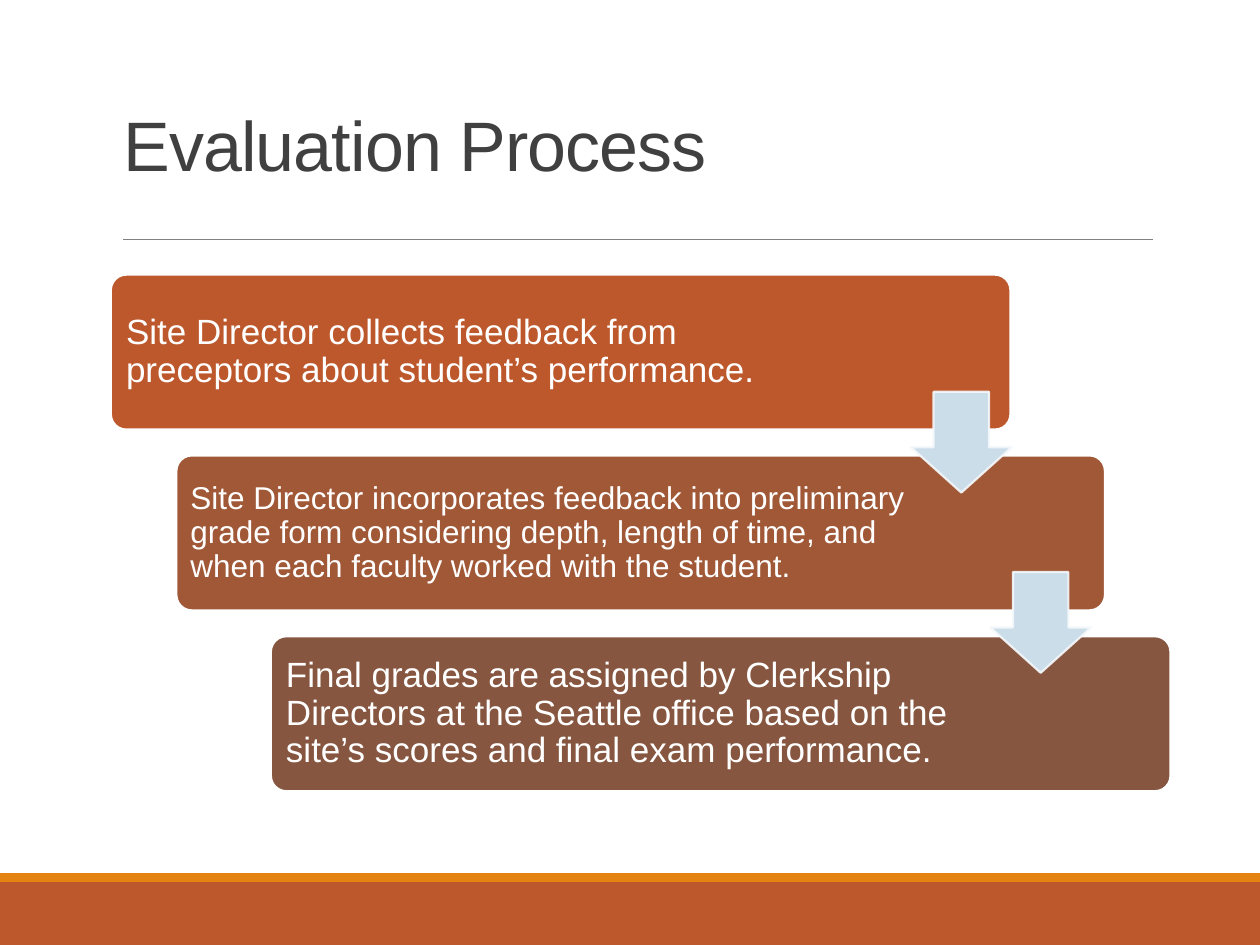
from dataclasses import dataclass

from lxml.etree import SubElement
from pptx import Presentation
from pptx.dml.color import RGBColor
from pptx.enum.shapes import MSO_CONNECTOR as CONN, MSO_SHAPE as SHAPE
from pptx.enum.text import MSO_ANCHOR as ANCHOR, MSO_AUTO_SIZE as AUTO, PP_ALIGN as ALIGN
from pptx.oxml.ns import qn
from pptx.util import Inches, Pt

COLS, ROWS = 100, 75
CARD_TOP, CARD_PITCH, CARD_H = 21.8, 14.35, 12.3
TEXT_GAP, TEXT_H = 0.4, 11.5
ARROW_TOP, ARROW_PITCH, ARROW_SIZE = 31.1, 14.3, 8

prs = Presentation()
prs.slide_width, prs.slide_height = Inches(10), Inches(7.5)


@dataclass
class Box:
    left: float
    top: float
    width: float
    height: float

    def emu(self) -> list[int]:
        return [x_at(self.left), y_at(self.top), x_at(self.width), y_at(self.height)]


@dataclass
class Step:
    left: float
    width: float
    text_width: float
    inset: float
    size: int
    fill: str
    text: str


STEPS = [
    Step(8.8, 71.4, 58.2, 0.08, 20, "BD582C",
         "Site Director collects feedback from preceptors about student’s performance."),
    Step(14, 73.7, 58.2, 0.07, 18, "A05837",
         "Site Director incorporates feedback into preliminary grade form considering "
         "depth, length of time, and when each faculty worked with the student."),
    Step(21.5, 71.4, 56.4, 0.08, 20, "865640",
         "Final grades are assigned by Clerkship Directors at the Seattle office based on "
         "the site’s scores and final exam performance."),
]
ARROW_LEFTS = [72.3, 78.6]


def x_at(col: float) -> int:
    return round(prs.slide_width * col / COLS)


def y_at(row: float) -> int:
    return round(prs.slide_height * row / ROWS)


def rgb(color: str) -> RGBColor:
    return RGBColor.from_string(color)


def apply(obj, formats: dict) -> None:
    for name, value in formats.items():
        setattr(obj, name, value)


def add_box(s, kind, box: Box, fill: str, line: str = "", adj: tuple = ()):
    sp = s.shapes.add_shape(kind, *box.emu())
    sp.shadow.inherit = False
    sp.fill.solid()
    sp.fill.fore_color.rgb = rgb(fill)
    for i, value in enumerate(adj):
        sp.adjustments[i] = value
    if line:
        sp.line.color.rgb = rgb(line)
        sp.line.width = Pt(1.25)
    else:
        sp.line.fill.background()
    return sp


def write(sp, text: str, size: int, color: str, frame: dict, para: dict):
    tf = sp.text_frame
    apply(tf, {"word_wrap": True, "auto_size": AUTO.NONE,
               "vertical_anchor": ANCHOR.MIDDLE, **frame})
    p = tf.paragraphs[0]
    apply(p, {"alignment": ALIGN.LEFT, **para})
    r = p.add_run()
    r.text = text
    apply(r.font, {"name": "Arial", "size": Pt(size)})
    r.font.color.rgb = rgb(color)
    return r


def add_title(s, text: str) -> None:
    sp = s.shapes.title
    apply(sp, dict(zip(("left", "top", "width", "height"), Box(8.8, 5.7, 53.2, 12.5).emu())))
    r = write(sp, text, 40, "404040", {}, {"line_spacing": 0.85})
    r.font._element.set("spc", "-50")


def add_rule(s) -> None:
    sp = s.shapes.add_connector(CONN.STRAIGHT, x_at(9.8), y_at(19), x_at(91.5), y_at(19))
    sp.line.color.rgb = rgb("808080")
    sp.line.width = Pt(0.5)
    SubElement(sp._element.spPr, qn("a:effectLst"))


def add_step(s, step: Step, index: int) -> None:
    top = CARD_TOP + index * CARD_PITCH
    add_box(s, SHAPE.ROUNDED_RECTANGLE, Box(step.left, top, step.width, CARD_H),
            step.fill, "FFFFFF", (0.1,))
    box = Box(step.left + TEXT_GAP, top + TEXT_GAP, step.text_width, TEXT_H)
    sides = ("left", "top", "right", "bottom")
    write(s.shapes.add_textbox(*box.emu()), step.text, step.size, "FFFFFF",
          {f"margin_{side}": Inches(step.inset) for side in sides},
          {"line_spacing": 0.9, "space_after": Pt(0.35 * step.size)})


def add_arrow(s, left: float, index: int) -> None:
    box = Box(left, ARROW_TOP + index * ARROW_PITCH, ARROW_SIZE, ARROW_SIZE)
    sp = add_box(s, SHAPE.DOWN_ARROW, box, "CCDDEA", "F5F8FB")
    sp.adjustments[0], sp.adjustments[1] = 0.55, 0.45
    color = sp._element.spPr.find(qn("a:ln")).find(".//" + qn("a:srgbClr"))
    SubElement(color, qn("a:alpha"), val="90000")


def main() -> None:
    s = prs.slides.add_slide(prs.slide_layouts[5])
    add_box(s, SHAPE.RECTANGLE, Box(0, 70, COLS, 5), "BD582C")
    add_box(s, SHAPE.RECTANGLE, Box(0, 69.3, COLS, 0.7), "E48312")
    add_rule(s)
    add_title(s, "Evaluation Process")
    for i, step in enumerate(STEPS):
        add_step(s, step, i)
    for i, left in enumerate(ARROW_LEFTS):
        add_arrow(s, left, i)
    prs.save("out.pptx")


if __name__ == "__main__":
    main()
